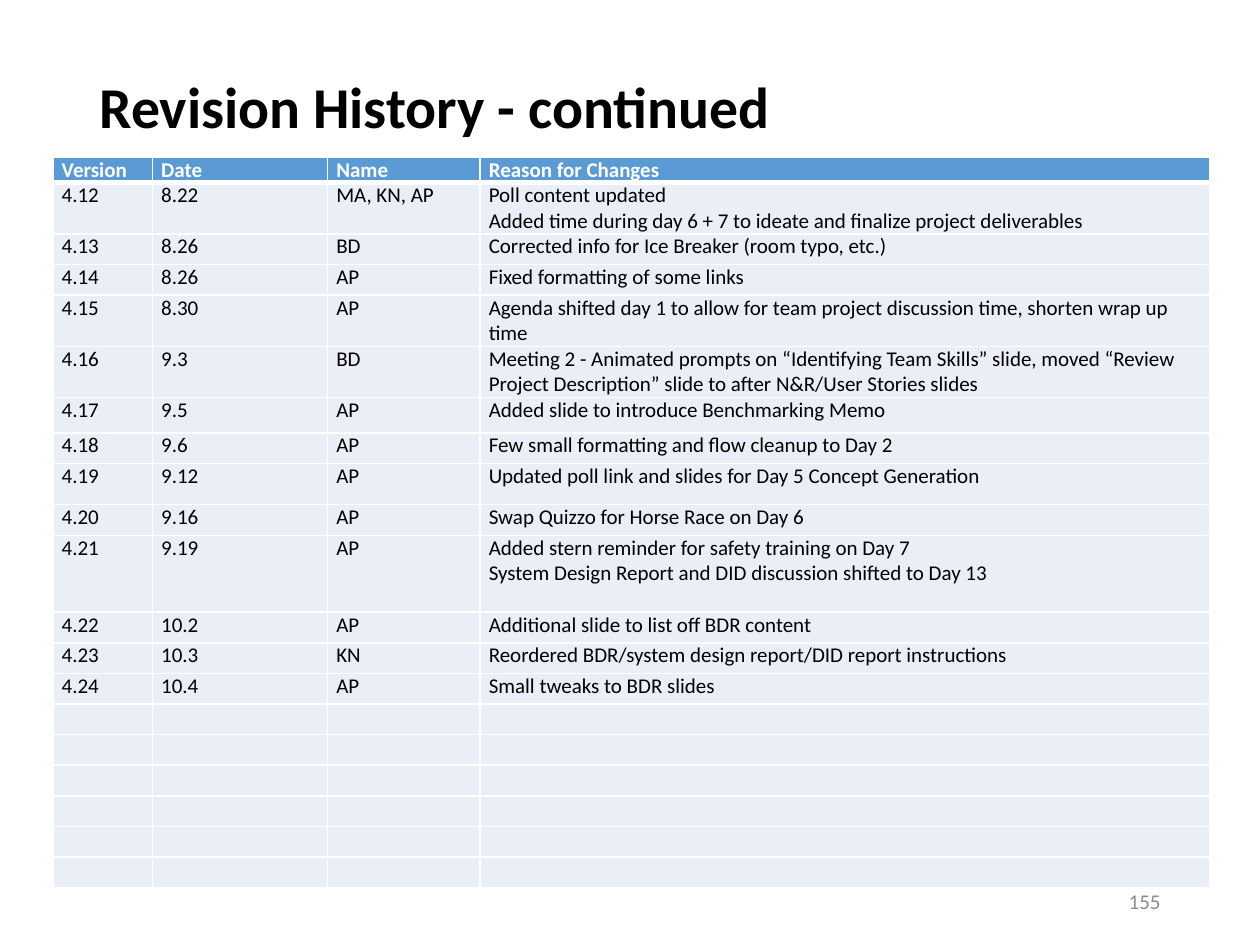
from lxml.etree import SubElement
from pptx import Presentation
from pptx.dml.color import RGBColor
from pptx.enum.text import MSO_ANCHOR, PP_ALIGN
from pptx.oxml.ns import qn
from pptx.util import Inches, Pt

UNIT = 0.1  # inches per grid column and grid row
COLUMN_WIDTHS = [7.9, 13.9, 12.1, 57.9]
HEADER_HEIGHT, LINE_HEIGHT = 2, 2.43
TALL_ROWS = {"4.12": 4.07, "4.15": 4.07, "4.16": 4.07,
             "4.17": 2.8, "4.19": 3.27, "4.21": 6.1}
HEADINGS = ["Version", "Date", "Name", "Reason for Changes"]
EMPTY_ROWS = 6
REVISIONS = [
    ["4.12", "8.22", "MA, KN, AP", "Poll content updated\n"
     "Added time during day 6 + 7 to ideate and finalize project deliverables"],
    ["4.13", "8.26", "BD", "Corrected info for Ice Breaker (room typo, etc.)"],
    ["4.14", "8.26", "AP", "Fixed formatting of some links"],
    ["4.15", "8.30", "AP", "Agenda shifted day 1 to allow for team project "
     "discussion time, shorten wrap up time"],
    ["4.16", "9.3", "BD", "Meeting 2 - Animated prompts on “Identifying Team Skills” slide, "
     "moved “Review Project Description” slide to after N&R/User Stories slides"],
    ["4.17", "9.5", "AP", "Added slide to introduce Benchmarking Memo"],
    ["4.18", "9.6", "AP", "Few small formatting and flow cleanup to Day 2"],
    ["4.19", "9.12", "AP", "Updated poll link and slides for Day 5 Concept Generation"],
    ["4.20", "9.16", "AP", "Swap Quizzo for Horse Race on Day 6"],
    ["4.21", "9.19", "AP", "Added stern reminder for safety training on Day 7\n"
     "System Design Report and DID discussion shifted to Day 13"],
    ["4.22", "10.2", "AP", "Additional slide to list off BDR content"],
    ["4.23", "10.3", "KN", "Reordered BDR/system design report/DID report instructions"],
    ["4.24", "10.4", "AP", "Small tweaks to BDR slides"],
]


def color(hex_string):
    return RGBColor.from_string(hex_string)


def grid(units):
    return Inches(units * UNIT)


def write(frame, text, size=12, ink="000000", bold=False, font="Calibri",
          align=PP_ALIGN.LEFT, spacing=None):
    """Fill a text frame, one paragraph per line of text."""
    frame.word_wrap = True
    for index, line in enumerate(text.split("\n")):
        paragraph = frame.add_paragraph() if index else frame.paragraphs[0]
        paragraph.alignment = align
        if spacing:
            paragraph.line_spacing = spacing
        if not line:
            # An empty cell takes its line height from the end mark.
            SubElement(paragraph._p, qn("a:endParaRPr"), sz=str(size * 100))
            continue
        run = paragraph.add_run()
        run.text = line
        run.font.name, run.font.size, run.font.bold = font, Pt(size), bold
        run.font.color.rgb = color(ink)


def add_borders(cell, bottom):
    """Draw white cell borders; bottom is the lower border's width in points."""
    properties = cell._tc.get_or_add_tcPr()
    for side, width in zip("LRTB", (1, 1, 1, bottom)):
        line = SubElement(properties, qn(f"a:ln{side}"), w=str(Pt(width)))
        SubElement(SubElement(line, qn("a:solidFill")), qn("a:srgbClr"), val="FFFFFF")


class RevisionDeck:
    """Holds the table style and the current slide."""

    header_fill, body_fill = "5B9BD5", "EAEFF7"

    def __init__(self):
        self.presentation = Presentation()
        self.presentation.slide_width = grid(100)
        self.presentation.slide_height = grid(75)
        self.slide = self.presentation.slides.add_slide(self.presentation.slide_layouts[6])

    def text(self, left, top, width, height, text, bottom_inset=0.5, **style):
        frame = self.slide.shapes.add_textbox(*map(grid, (left, top, width, height))).text_frame
        frame.vertical_anchor = MSO_ANCHOR.MIDDLE
        frame.margin_bottom = grid(bottom_inset)
        write(frame, text, **style)

    def cell(self, cell, text, header):
        cell.margin_left = cell.margin_right = grid(0.7)
        cell.margin_top = cell.margin_bottom = 0
        add_borders(cell, bottom=3 if header else 1)
        cell.fill.solid()
        cell.fill.fore_color.rgb = color(self.header_fill if header else self.body_fill)
        write(cell.text_frame, text, bold=header, ink="FFFFFF" if header else "000000")

    def table(self, left, top, widths, heights, rows):
        table = self.slide.shapes.add_table(
            len(rows), len(widths), grid(left), grid(top),
            grid(sum(widths)), grid(sum(heights))).table
        for column, width in zip(table.columns, widths):
            column.width = grid(width)
        for index, (row, height, texts) in enumerate(zip(table.rows, heights, rows)):
            row.height = grid(height)
            for cell, text in zip(row.cells, texts):
                self.cell(cell, text, header=index == 0)


def main():
    deck = RevisionDeck()
    deck.text(6.9, 4, 86.2, 14.5, "Revision History - continued",
              bottom_inset=5.5, size=33, bold=True, spacing=0.9)
    body = REVISIONS + [[""] * len(HEADINGS)] * EMPTY_ROWS
    heights = [HEADER_HEIGHT] + [TALL_ROWS.get(row[0], LINE_HEIGHT) for row in body]
    deck.table(4.2, 12.5, COLUMN_WIDTHS, heights, [HEADINGS] + body)
    deck.text(70.6, 69.5, 22.5, 4, "155", ink="8C8C8C", align=PP_ALIGN.RIGHT)
    deck.presentation.save("out.pptx")


if __name__ == "__main__":
    main()
